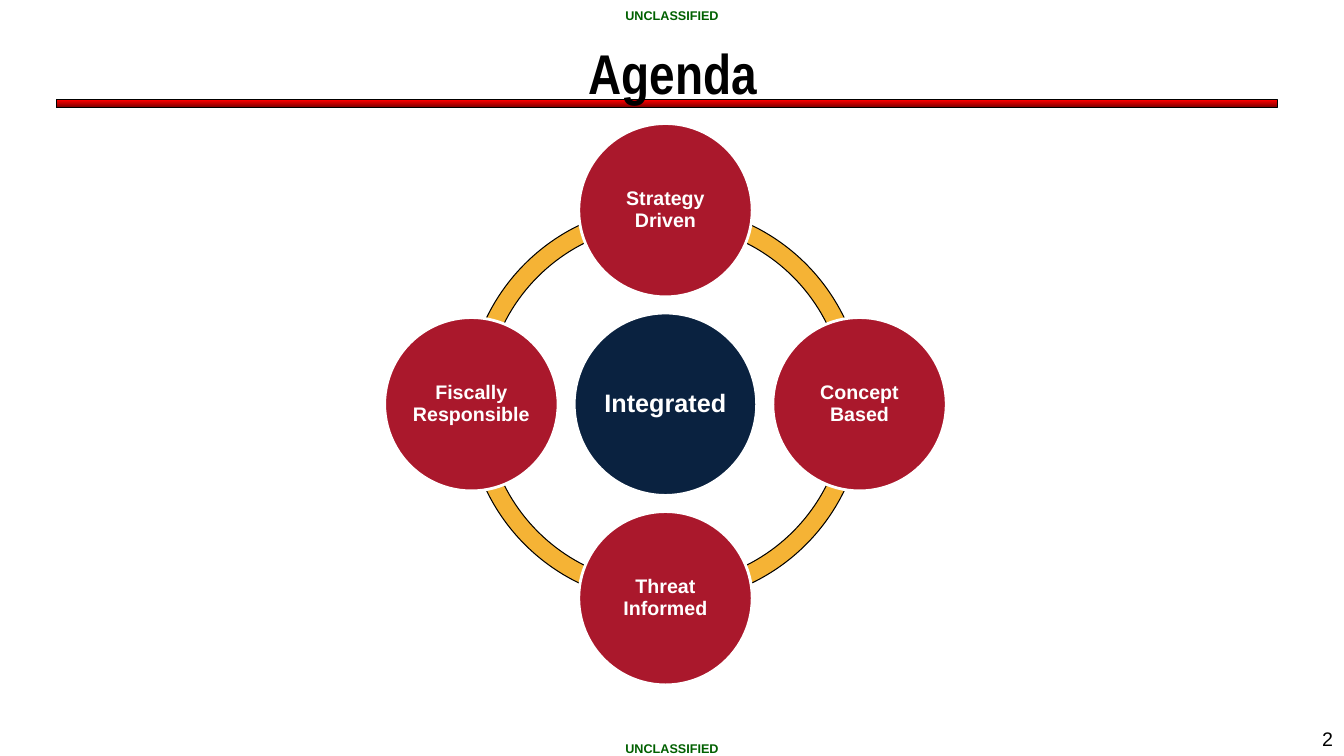
from pptx import Presentation
from pptx.dml.color import RGBColor
from pptx.enum.shapes import MSO_SHAPE
from pptx.enum.text import MSO_ANCHOR, MSO_AUTO_SIZE, PP_ALIGN
from pptx.util import Inches, Pt

RECT, OVAL, ARC = MSO_SHAPE.RECTANGLE, MSO_SHAPE.OVAL, MSO_SHAPE.BLOCK_ARC
MIDDLE, TOP = MSO_ANCHOR.MIDDLE, MSO_ANCHOR.TOP
CENTER, RIGHT = PP_ALIGN.CENTER, PP_ALIGN.RIGHT
NO_FIT = MSO_AUTO_SIZE.NONE

COLORS = {
    "black": "000000", "white": "FFFFFF", "green": "006000",
    "red": "FF0000", "dark_red": "760000",
    "navy": "0A2240", "crimson": "AA182C", "gold": "F5B335",
}
RGB = {name: RGBColor.from_string(value) for name, value in COLORS.items()}


def add_shape(kind, x, y, w, h, line, weight):
    sp = slide.shapes.add_shape(kind, Inches(x), Inches(y), Inches(w), Inches(h))
    sp.shadow.inherit = False
    sp.line.color.rgb = RGB[line]
    sp.line.width = Pt(weight)
    return sp


def write(sp, text, size, color, bold=True, font="Arial", align=CENTER,
          anchor=MIDDLE, inset=(0.1, 0.05), spacing=1.0):
    tf = sp.text_frame
    tf.word_wrap = True
    tf.auto_size = NO_FIT
    tf.vertical_anchor = anchor
    tf.margin_left = tf.margin_right = Inches(inset[0])
    tf.margin_top = tf.margin_bottom = Inches(inset[1])
    p = tf.paragraphs[0]
    p.alignment = align
    p.line_spacing = spacing
    r = p.add_run()
    r.text = text
    r.font.name = font
    r.font.size = Pt(size)
    r.font.bold = bold
    r.font.color.rgb = RGB[color]


prs = Presentation()
prs.slide_width, prs.slide_height = Inches(13.33), Inches(7.5)
slide = prs.slides.add_slide(prs.slide_layouts[5])

# Red rule under the title
rule = add_shape(RECT, 0.56, 0.99, 12.11, 0.08, "black", 0.75)
rule.fill.gradient()
rule.fill.gradient_angle = 270
for stop, color in zip(rule.fill.gradient_stops, ("red", "dark_red")):
    stop.color.rgb = RGB[color]

# Page number and classification marks
number = slide.shapes.add_textbox(Inches(12.1), Inches(7.16), Inches(1.22), Inches(0.34))
write(number, "2", 14, "black", bold=False, align=RIGHT, anchor=TOP)
for y in (7.28, 0):
    mark = slide.shapes.add_textbox(Inches(5.88), Inches(y), Inches(1.57), Inches(0.3))
    write(mark, "UNCLASSIFIED", 9, "green", inset=(0.07, 0.04))

# Title, in front of the rule
title = slide.shapes.title
title.left, title.top = Inches(1.17), Inches(0.22)
title.width, title.height = Inches(11), Inches(0.99)
write(title, "Agenda", 40, "black", font="Arial Narrow")
slide.shapes._spTree.append(title._element)

# Ring of four quarter arcs; angles are in units of 100000/60000 degree
CX, CY = 6.6, 4.01
RING, QUARTER = 3.94, 54
for start in (2, 1, 0, 3):
    arc = add_shape(ARC, CX - RING / 2, CY - RING / 2, RING, RING, "black", 0.75)
    arc.fill.solid()
    arc.fill.fore_color.rgb = RGB["gold"]
    arc.adjustments[0] = start * QUARTER
    arc.adjustments[1] = (start + 1) % 4 * QUARTER
    arc.adjustments[2] = 0.046

# Hub and the four circles around it: text, column, row, diameter, size, fill
STEP = 1.925
circles = [
    ("Integrated", 0, 0, 1.81, 18, "navy"),
    ("Strategy Driven", 0, -1, 1.72, 14, "crimson"),
    ("Concept Based", 1, 0, 1.72, 14, "crimson"),
    ("Threat Informed", 0, 1, 1.72, 14, "crimson"),
    ("Fiscally Responsible", -1, 0, 1.72, 14, "crimson"),
]
for text, col, row, size, points, fill in circles:
    x, y = CX + col * STEP - size / 2, CY + row * STEP - size / 2
    circle = add_shape(OVAL, x, y, size, size, "white", 2)
    circle.fill.solid()
    circle.fill.fore_color.rgb = RGB[fill]
    write(circle, text, points, "white", inset=(0, 0), spacing=0.9)

prs.save("out.pptx")
